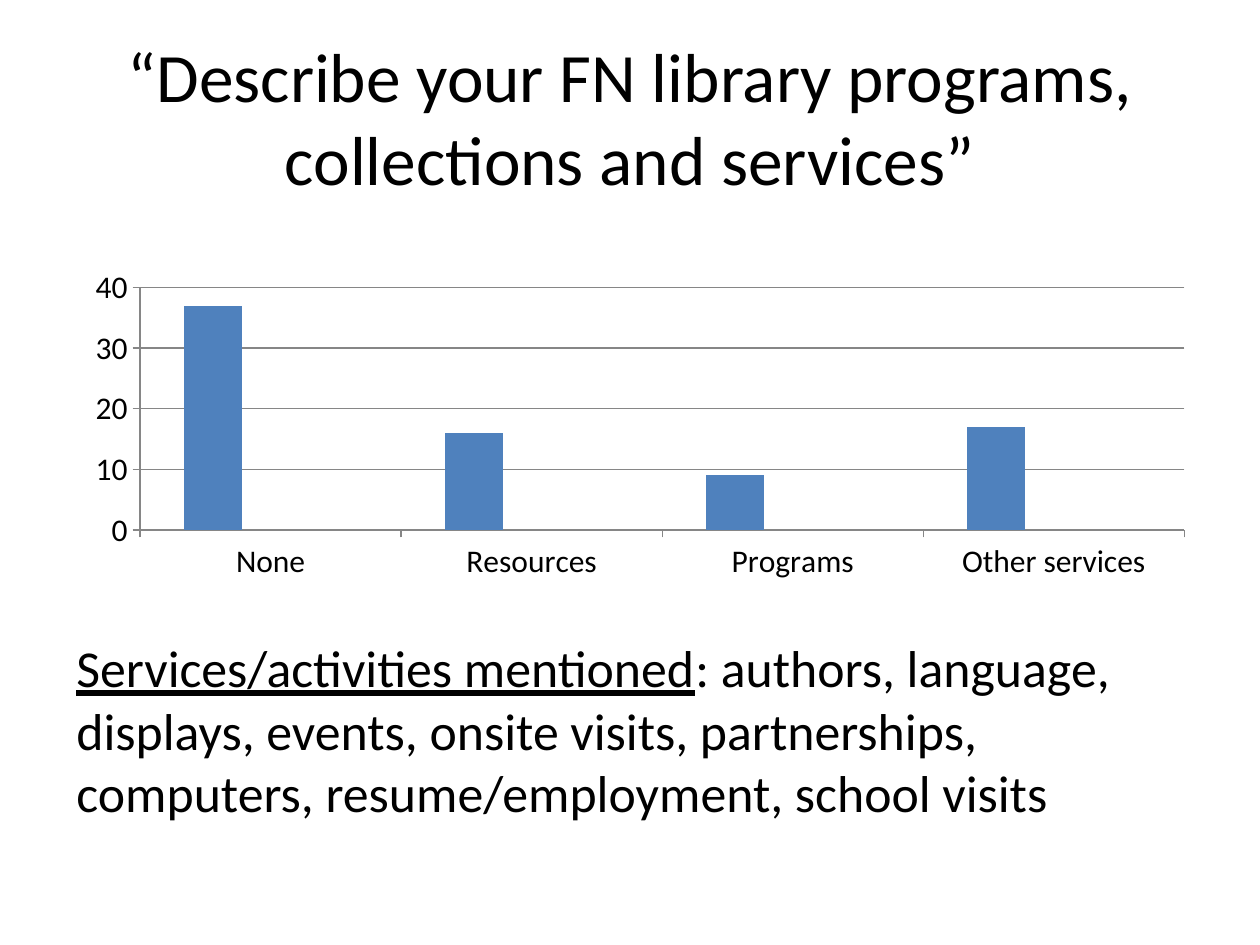
from pptx import Presentation
from pptx.chart.data import CategoryChartData
from pptx.dml.color import RGBColor
from pptx.enum.chart import XL_CHART_TYPE, XL_TICK_MARK
from pptx.enum.text import MSO_ANCHOR, PP_ALIGN
from pptx.util import Emu, Pt

TITLE = [("“Describe your FN library programs, collections and services”", False)]
MENTIONED = [
    ("Services/activities mentioned", True),
    (": authors, language, displays, events, onsite visits, partnerships, "
     "computers, resume/employment, school visits", False),
]
CATEGORIES = ["None", "Resources", "Programs", "Other services"]
SERIES = [
    ("Series 1", [37, 16, 9, 17], "blue"),
    ("Series 2", [None] * 4, "red"),
    ("Series 3", [None] * 4, "green"),
]
COLORS = {"text": "000000", "line": "868686",
          "blue": "4F81BD", "red": "C0504D", "green": "9BBB59"}
FONT = "Calibri"

# left, top, width, height in px
SLIDE_SIZE = (1260, 945)
TITLE_BOX = (63, 38, 1134, 157)
CHART_BOX = (73, 262, 1134, 325)
MENTIONED_BOX = (64, 630, 1134, 214)


def px(*lengths):
    return [Emu(round(length * 914400 / 126)) for length in lengths]


def color(name):
    return RGBColor.from_string(COLORS[name])


def style_font(font, size):
    font.name = FONT
    font.size = Pt(size)
    font.color.rgb = color("text")


def add_text(slide, box, pieces, size, align, anchor):
    """Add one paragraph made of (text, underlined) pieces."""
    frame = slide.shapes.add_textbox(*px(*box)).text_frame
    frame.word_wrap = True
    frame.vertical_anchor = anchor
    paragraph = frame.paragraphs[0]
    paragraph.alignment = align
    for text, underlined in pieces:
        run = paragraph.add_run()
        run.text = text
        style_font(run.font, size)
        run.font.underline = underlined
    return paragraph


def add_response_chart(slide):
    data = CategoryChartData()
    data.categories = CATEGORIES
    for name, values, _ in SERIES:
        data.add_series(name, values)
    chart = slide.shapes.add_chart(
        XL_CHART_TYPE.COLUMN_CLUSTERED, *px(*CHART_BOX), data).chart
    chart.has_legend = False
    chart.has_title = False
    style_font(chart.font, 18)

    plot = chart.plots[0]
    plot.gap_width = 150
    plot.overlap = 0
    plot.vary_by_categories = False
    for series, (_, _, fill) in zip(plot.series, SERIES):
        series.format.fill.solid()
        series.format.fill.fore_color.rgb = color(fill)

    values_axis = chart.value_axis
    values_axis.minimum_scale = 0
    values_axis.maximum_scale = 40
    values_axis.major_unit = 10
    values_axis.has_major_gridlines = True
    for axis in (chart.category_axis, values_axis):
        axis.major_tick_mark = XL_TICK_MARK.OUTSIDE
        axis.minor_tick_mark = XL_TICK_MARK.NONE
    for part in (chart.category_axis, values_axis, values_axis.major_gridlines):
        part.format.line.color.rgb = color("line")
        part.format.line.width = Pt(0.75)


def main():
    presentation = Presentation()
    presentation.slide_width, presentation.slide_height = px(*SLIDE_SIZE)
    slide = presentation.slides.add_slide(presentation.slide_layouts[6])
    add_text(slide, TITLE_BOX, TITLE, 39.6, PP_ALIGN.CENTER, MSO_ANCHOR.MIDDLE)
    add_response_chart(slide)
    mentioned = add_text(slide, MENTIONED_BOX, MENTIONED, 29.6,
                         PP_ALIGN.LEFT, MSO_ANCHOR.TOP)
    mentioned.space_before = Pt(6)
    presentation.save("out.pptx")


if __name__ == "__main__":
    main()
